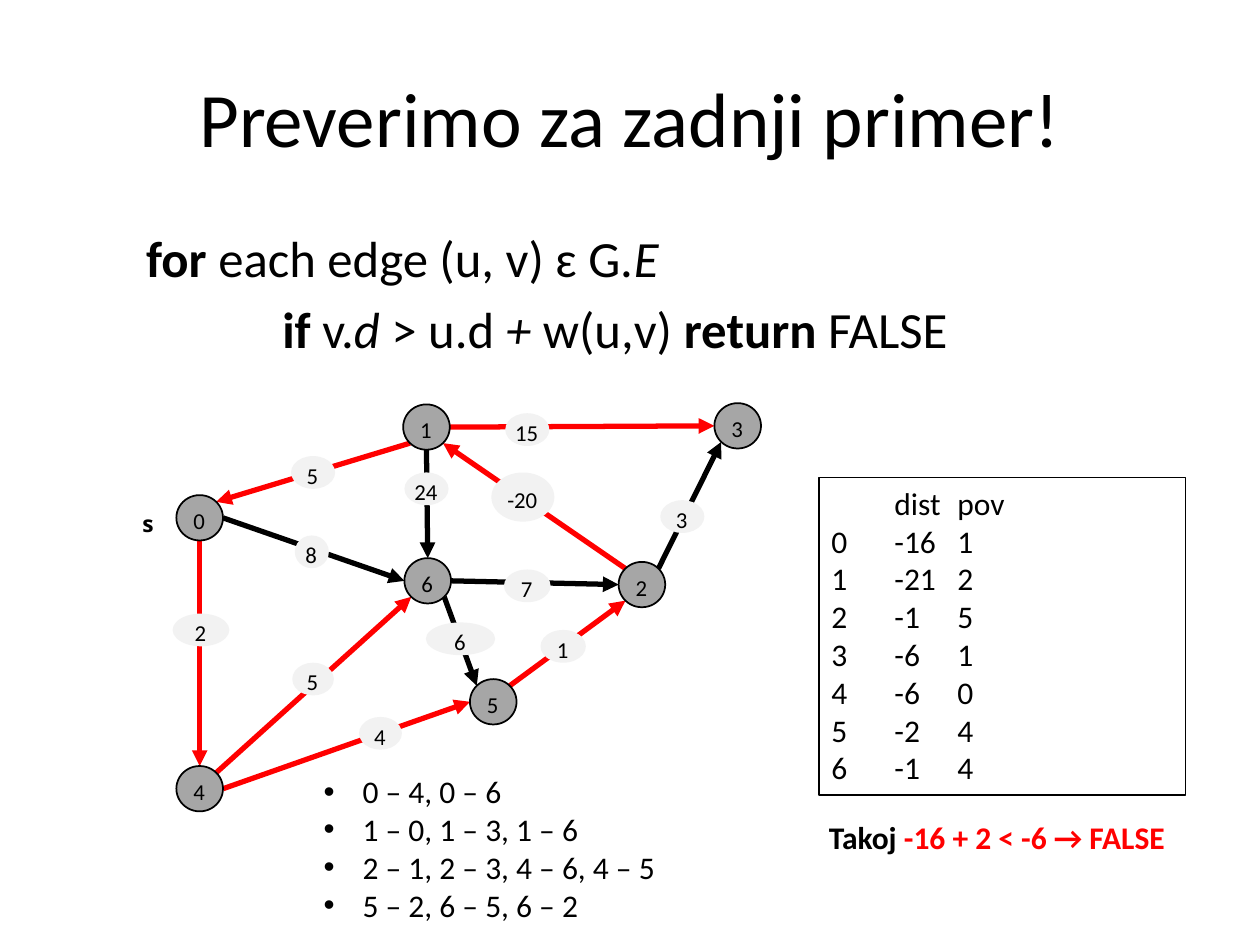
from dataclasses import dataclass
from enum import Enum
from math import cos, radians, sin
from typing import NamedTuple

from lxml.etree import SubElement
from pptx import Presentation
from pptx.dml.color import RGBColor
from pptx.enum.shapes import MSO_CONNECTOR as Connector, MSO_SHAPE as Preset
from pptx.enum.text import MSO_ANCHOR as Anchor, MSO_AUTO_SIZE as AutoSize, PP_ALIGN as Align
from pptx.oxml.ns import qn
from pptx.util import Inches, Pt


@dataclass(frozen=True)
class Theme:
    font: str = "Calibri"
    source_font: str = "Open Sans"
    ink: str = "000000"
    accent: str = "FF0000"
    node: str = "A6A6A6"
    weight: str = "F2F2F2"
    title: int = 44
    body: int = 29
    note: int = 18
    graph: int = 13


class Site(Enum):
    """Angle, clockwise from the right, of a point on a node's rim."""
    RIGHT = 0
    LOW_RIGHT = 45
    BOTTOM = 90
    LOW_LEFT = 135
    LEFT = 180
    UP_LEFT = 225
    TOP = 270
    UP_RIGHT = 315


class Box(NamedTuple):
    left: float
    top: float
    width: float
    height: float

    def lengths(self) -> list:
        return [Inches(value) for value in self]


class Edge(NamedTuple):
    start: int
    leave: Site
    end: int
    arrive: Site
    weight: str
    label: Box
    in_tree: bool = False


class Span(NamedTuple):
    text: str
    bold: bool = False
    italic: bool = False
    color: str = Theme.ink


THEME = Theme()
NODE_SIZE = (0.37, 0.36)
NODES = {
    0: Box(1.4, 3.93, *NODE_SIZE), 1: Box(3.2, 3.21, *NODE_SIZE),
    2: Box(4.91, 4.46, *NODE_SIZE), 3: Box(5.67, 3.2, *NODE_SIZE),
    4: Box(1.4, 6.08, *NODE_SIZE), 5: Box(3.73, 5.39, *NODE_SIZE),
    6: Box(3.21, 4.43, *NODE_SIZE),
}
EDGES = [
    Edge(0, Site.RIGHT, 6, Site.LEFT, "8", Box(2.34, 4.25, 0.27, 0.26)),
    Edge(2, Site.UP_RIGHT, 3, Site.LOW_LEFT, "3", Box(5.24, 3.97, 0.35, 0.26)),
    Edge(2, Site.UP_LEFT, 1, Site.LOW_RIGHT, "-20", Box(3.9, 3.75, 0.5, 0.39), True),
    Edge(1, Site.BOTTOM, 6, Site.TOP, "24", Box(3.21, 3.75, 0.35, 0.26)),
    Edge(6, Site.RIGHT, 2, Site.LEFT, "7", Box(4, 4.52, 0.37, 0.26)),
    Edge(6, Site.LOW_RIGHT, 5, Site.UP_LEFT, "6", Box(3.38, 4.94, 0.55, 0.26)),
    Edge(5, Site.UP_RIGHT, 2, Site.LOW_LEFT, "1", Box(4.29, 5, 0.36, 0.26), True),
    Edge(4, Site.RIGHT, 5, Site.LEFT, "4", Box(2.85, 5.69, 0.34, 0.26), True),
    Edge(4, Site.UP_RIGHT, 6, Site.LOW_LEFT, "5", Box(2.32, 5.26, 0.33, 0.26), True),
    Edge(0, Site.BOTTOM, 4, Site.TOP, "2", Box(1.37, 4.87, 0.45, 0.26), True),
    Edge(1, Site.RIGHT, 3, Site.LEFT, "15", Box(4.01, 3.28, 0.35, 0.26), True),
    Edge(1, Site.LOW_LEFT, 0, Site.UP_RIGHT, "5", Box(2.31, 3.62, 0.35, 0.26), True),
]
DISTANCES = [
    ("", "dist", "pov"), (0, -16, 1), (1, -21, 2), (2, -1, 5),
    (3, -6, 1), (4, -6, 0), (5, -2, 4), (6, -1, 4),
]
EDGE_ORDER = ["0 – 4, 0 – 6", "1 – 0, 1 – 3, 1 – 6", "2 – 1, 2 – 3, 4 – 6, 4 – 5", "5 – 2, 6 – 5, 6 – 2"]
# Each line of the pseudocode has its left margin and its spans.
PSEUDOCODE = [
    (0.56, [Span("for ", bold=True), Span("each edge (u, v) ɛ G."), Span("E", italic=True)]),
    (1.64, [Span("if ", bold=True), Span("v."), Span("d ", italic=True), Span("> u.d"),
            Span(" + ", italic=True), Span("w(u,v) "), Span("return ", bold=True), Span("FALSE")]),
]


def apply(target, formats: dict) -> None:
    for name, value in formats.items():
        setattr(target, name, value)


def write(paragraph, spans: list[Span], size: int, font: str = THEME.font) -> None:
    for span in spans:
        run = paragraph.add_run()
        run.text = span.text
        apply(run.font, {"name": font, "size": Pt(size), "bold": span.bold, "italic": span.italic})
        run.font.color.rgb = RGBColor.from_string(span.color)


def write_lines(frame, lines: list[list[Span]], size: int) -> list:
    """Write one paragraph per line and return the paragraphs."""
    for number, spans in enumerate(lines):
        write(frame.add_paragraph() if number else frame.paragraphs[0], spans, size)
    return list(frame.paragraphs)


def indent(paragraph, margin: float, hanging: float = 0, bullet: str = "") -> None:
    props = paragraph._p.get_or_add_pPr()
    props.set("marL", str(Inches(margin)))
    props.set("indent", str(-Inches(hanging)))
    if bullet:
        SubElement(props, qn("a:buFont")).set("typeface", "Arial")
        SubElement(props, qn("a:buChar")).set("char", bullet)
    else:
        SubElement(props, qn("a:buNone"))


def add_text(shapes, box: Box, lines: list[list[Span]]):
    text_box = shapes.add_textbox(*box.lengths())
    apply(text_box.text_frame, {"word_wrap": True, "auto_size": AutoSize.NONE})
    write_lines(text_box.text_frame, lines, THEME.note)
    return text_box


def rim_point(box: Box, site: Site) -> list:
    angle = radians(site.value)
    return [Inches(box.left + box.width * (1 + cos(angle)) / 2),
            Inches(box.top + box.height * (1 + sin(angle)) / 2)]


def add_edge(shapes, edge: Edge) -> None:
    arrow = shapes.add_connector(Connector.STRAIGHT, *rim_point(NODES[edge.start], edge.leave),
                                 *rim_point(NODES[edge.end], edge.arrive))
    arrow.line.color.rgb = RGBColor.from_string(THEME.accent if edge.in_tree else THEME.ink)
    arrow.line.width = Pt(3)
    props = arrow._element.spPr
    SubElement(props.find(qn("a:ln")), qn("a:tailEnd")).set("type", "triangle")
    SubElement(props, qn("a:effectLst"))


def add_oval(shapes, box: Box, text: str, fill: str, outlined: bool) -> None:
    oval = shapes.add_shape(Preset.OVAL, *box.lengths())
    oval.shadow.inherit = False
    oval.fill.solid()
    oval.fill.fore_color.rgb = RGBColor.from_string(fill)
    if outlined:
        oval.line.color.rgb = RGBColor.from_string(THEME.ink)
        oval.line.width = Pt(1)
    else:
        oval.line.fill.background()
    apply(oval.text_frame, {"margin_left": 0, "margin_top": 0, "margin_right": Inches(0.01),
                            "margin_bottom": 0, "vertical_anchor": Anchor.MIDDLE, "word_wrap": False})
    paragraph = oval.text_frame.paragraphs[0]
    apply(paragraph, {"alignment": Align.CENTER, "line_spacing": 1.2})
    write(paragraph, [Span(text)], THEME.graph)


def add_graph(shapes) -> None:
    for edge in EDGES:
        add_edge(shapes, edge)
    for number, box in NODES.items():
        add_oval(shapes, box, str(number), THEME.node, outlined=True)
    for edge in EDGES:
        add_oval(shapes, edge.label, edge.weight, THEME.weight, outlined=False)
    source = shapes.add_textbox(*Box(1.09, 3.96, 0.18, 0.29).lengths())
    apply(source.text_frame, {"margin_left": 0, "margin_top": 0, "margin_right": Inches(0.05),
                              "margin_bottom": 0, "word_wrap": False})
    paragraph = source.text_frame.paragraphs[0]
    paragraph.line_spacing = 1.4
    indent(paragraph, 0.04)
    write(paragraph, [Span("s", bold=True)], THEME.graph, THEME.source_font)


def main() -> None:
    deck = Presentation()
    apply(deck, {"slide_width": Inches(10), "slide_height": Inches(7.5)})
    slide = deck.slides.add_slide(deck.slide_layouts[1])
    shapes = slide.shapes
    title, body = slide.placeholders
    for holder, box in ((title, Box(0.5, 0.3, 9, 1.25)), (body, Box(0.5, 1.75, 9, 4.95))):
        apply(holder, dict(zip(("left", "top", "width", "height"), box.lengths())))
    write(title.text_frame.paragraphs[0], [Span("Preverimo za zadnji primer!")], THEME.title)
    code = write_lines(body.text_frame, [spans for _, spans in PSEUDOCODE], THEME.body)
    for paragraph, (margin, _) in zip(code, PSEUDOCODE):
        indent(paragraph, margin)

    add_graph(shapes.add_group_shape().shapes)

    distances = add_text(shapes, Box(6.5, 3.79, 2.91, 2.52),
                         [[Span("\t".join(map(str, row)))] for row in DISTANCES])
    distances.line.color.rgb = RGBColor.from_string(THEME.ink)
    distances.line.width = Pt(0.75)
    order = add_text(shapes, Box(1.97, 6.08, 5, 1.31), [[Span(edges)] for edges in EDGE_ORDER])
    for paragraph in order.text_frame.paragraphs:
        indent(paragraph, 0.81, 0.31, "•")
    add_text(shapes, Box(6.48, 6.44, 3.07, 1.01),
             [[Span("Takoj", bold=True),
               Span(" -16 + 2 < -6 → FALSE", bold=True, color=THEME.accent)]])
    deck.save("out.pptx")


if __name__ == "__main__":
    main()
